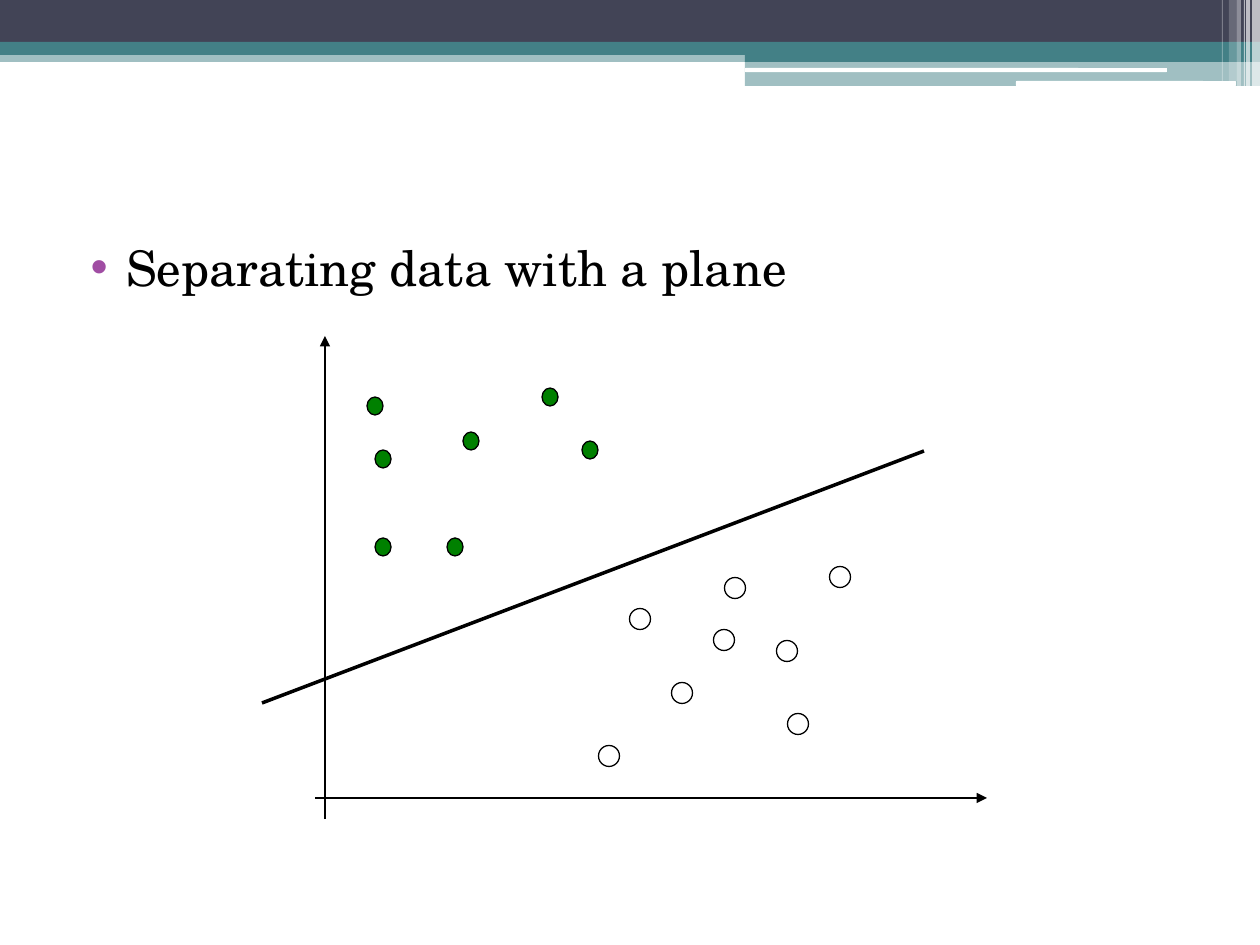
from lxml import etree
from pptx import Presentation
from pptx import util as u
from pptx.dml.color import RGBColor
from pptx.enum import shapes as sh
from pptx.enum import text as tx
from pptx.oxml import ns

SCALE = 914400 / 126
NAVY = RGBColor(0x42, 0x44, 0x56)
TEAL = RGBColor(0x43, 0x80, 0x86)
WHITE = RGBColor(0xFF, 0xFF, 0xFF)
BLACK = RGBColor(0, 0, 0)
GREEN = RGBColor(0, 0x80, 0)
RECT, ROUND, OVAL = (sh.MSO_SHAPE.RECTANGLE, sh.MSO_SHAPE.ROUNDED_RECTANGLE,
                     sh.MSO_SHAPE.OVAL)


def add_form(home, kind, box, color, alpha=100):
    form = home.add_shape(kind, *[u.Emu(round(n * SCALE)) for n in box])
    form.shadow.inherit = False
    form.fill.solid()
    form.fill.fore_color.rgb = color
    form.line.fill.background()
    if alpha < 100:
        tint = form.fill._xPr.find(".//" + ns.qn("a:srgbClr"))
        etree.SubElement(tint, ns.qn("a:alpha"), val=str(alpha * 1000))
    return form


def add_line(home, ends, width, arrow=False):
    line = home.add_connector(sh.MSO_CONNECTOR.STRAIGHT,
                              *[u.Emu(round(n * SCALE)) for n in ends])
    line.line.color.rgb = BLACK
    line.line.width = u.Pt(width)
    if arrow:
        etree.SubElement(line.line._get_or_add_ln(), ns.qn("a:tailEnd"),
                         type="triangle")
    etree.SubElement(line._element.spPr, ns.qn("a:effectLst"))


prs = Presentation()
prs.slide_width, prs.slide_height = u.Inches(10), u.Inches(7.5)
slide = prs.slides.add_slide(prs.slide_layouts[1])
title = slide.shapes.title._element
title.getparent().remove(title)

# Header bands
bands = [
    (RECT, (0, 50, 1260, 12), TEAL, 50),
    (RECT, (0, 0, 1260, 43), NAVY, 100),
    (RECT, (0, 42, 1260, 13), TEAL, 100),
    (RECT, (745, 49, 515, 13), TEAL, 100),
    (RECT, (745, 61, 515, 25), TEAL, 50),
    (ROUND, (745, 68, 422, 4), WHITE, 100),
    (ROUND, (1016, 81, 220, 5), WHITE, 100),
]
for kind, box, color, alpha in bands:
    add_form(slide.shapes, kind, box, color, alpha)

# Pale stripes at the right edge: left, width, height, opacity
stripes = [(1252, 8, 86, 65), (1246, 4, 86, 65), (1244, 1, 86, 60),
           (1237, 4, 86, 40), (1229, 8, 81, 20), (1222, 1, 81, 30)]
for left, width, height, alpha in stripes:
    add_form(slide.shapes, RECT, (left, 0, width, height), WHITE, alpha)

# Bullet text
body = slide.placeholders[1]
body.left, body.top, body.width, body.height = [
    u.Emu(round(n * SCALE)) for n in (63, 231, 1134, 675)]
frame = body.text_frame
frame.text = "Separating data with a plane"
frame.vertical_anchor = tx.MSO_ANCHOR.TOP
para = frame.paragraphs[0]
para.space_before = u.Pt(3)
font = para.runs[0].font
font.name, font.size = "TeX Gyre Schola", u.Pt(28)
font.color.rgb = BLACK
props = para._p.get_or_add_pPr()
props.set("marL", str(u.Inches(0.4)))
props.set("indent", str(u.Inches(-0.28)))
tint = etree.SubElement(props, ns.qn("a:buClr"))
etree.SubElement(tint, ns.qn("a:srgbClr"), val="A04DA3")
etree.SubElement(props, ns.qn("a:buChar"), char="•")

# Two classes of points, given by their centres
above = [(375, 406), (383, 459), (471, 441), (383, 547), (455, 547),
         (550, 397), (590, 450)]
below = [(640, 619), (735, 588), (724, 640), (787, 651), (840, 577),
         (682, 693), (609, 756), (798, 724)]
for dots, wide, high, color in ((above, 16, 18, GREEN), (below, 21, 21, WHITE)):
    group = slide.shapes.add_group_shape()
    for x, y in dots:
        dot = add_form(group.shapes, OVAL,
                       (x - wide / 2, y - high / 2, wide, high), color)
        dot.line.color.rgb = BLACK
        dot.line.width = u.Pt(0.75)

# Axes and separating line
axes = slide.shapes.add_group_shape()
add_line(axes.shapes, (315, 798, 987, 798), 1, arrow=True)
add_line(axes.shapes, (325, 819, 325, 336), 1, arrow=True)
add_line(slide.shapes, (262, 703, 924, 451), 2)

prs.save("out.pptx")
